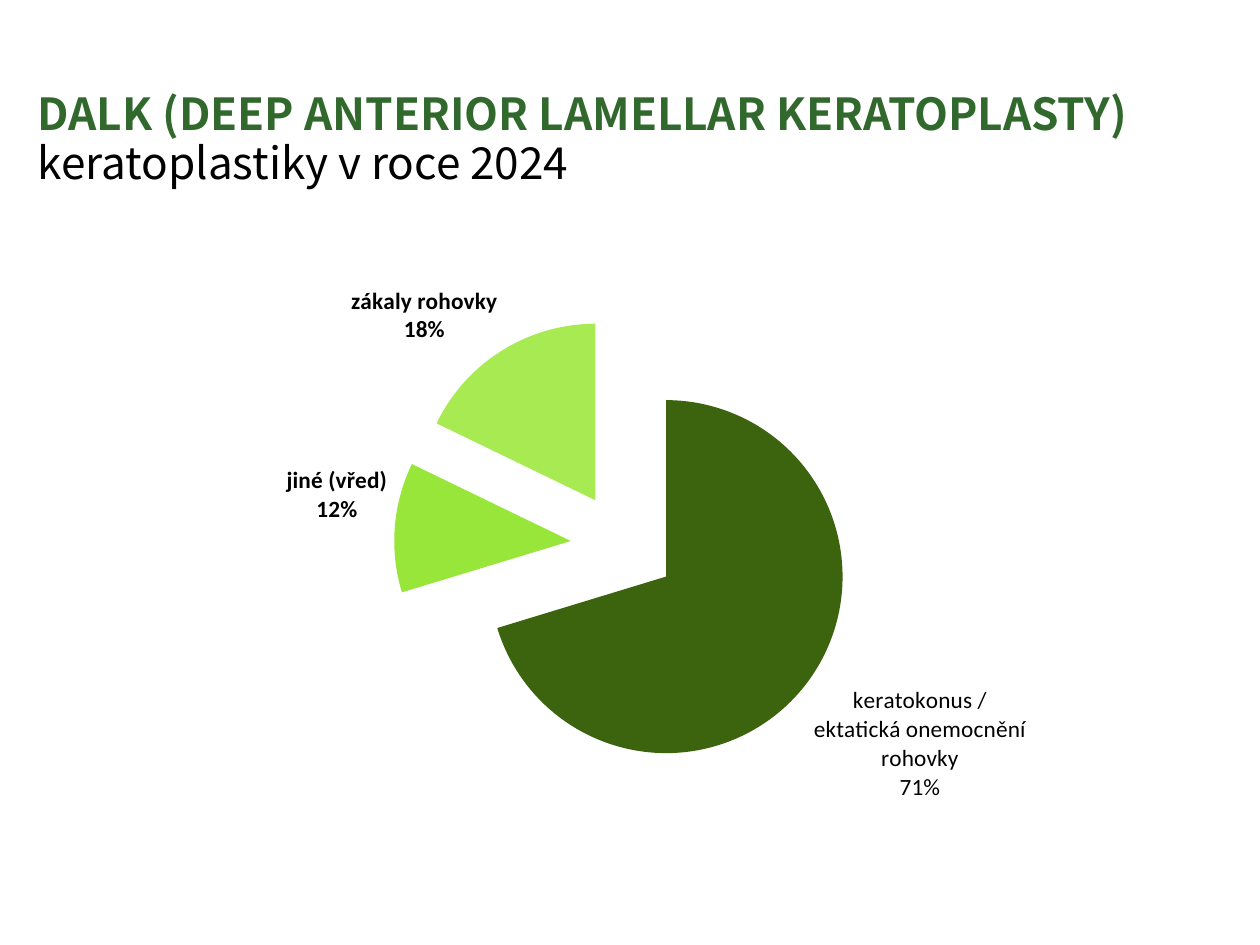
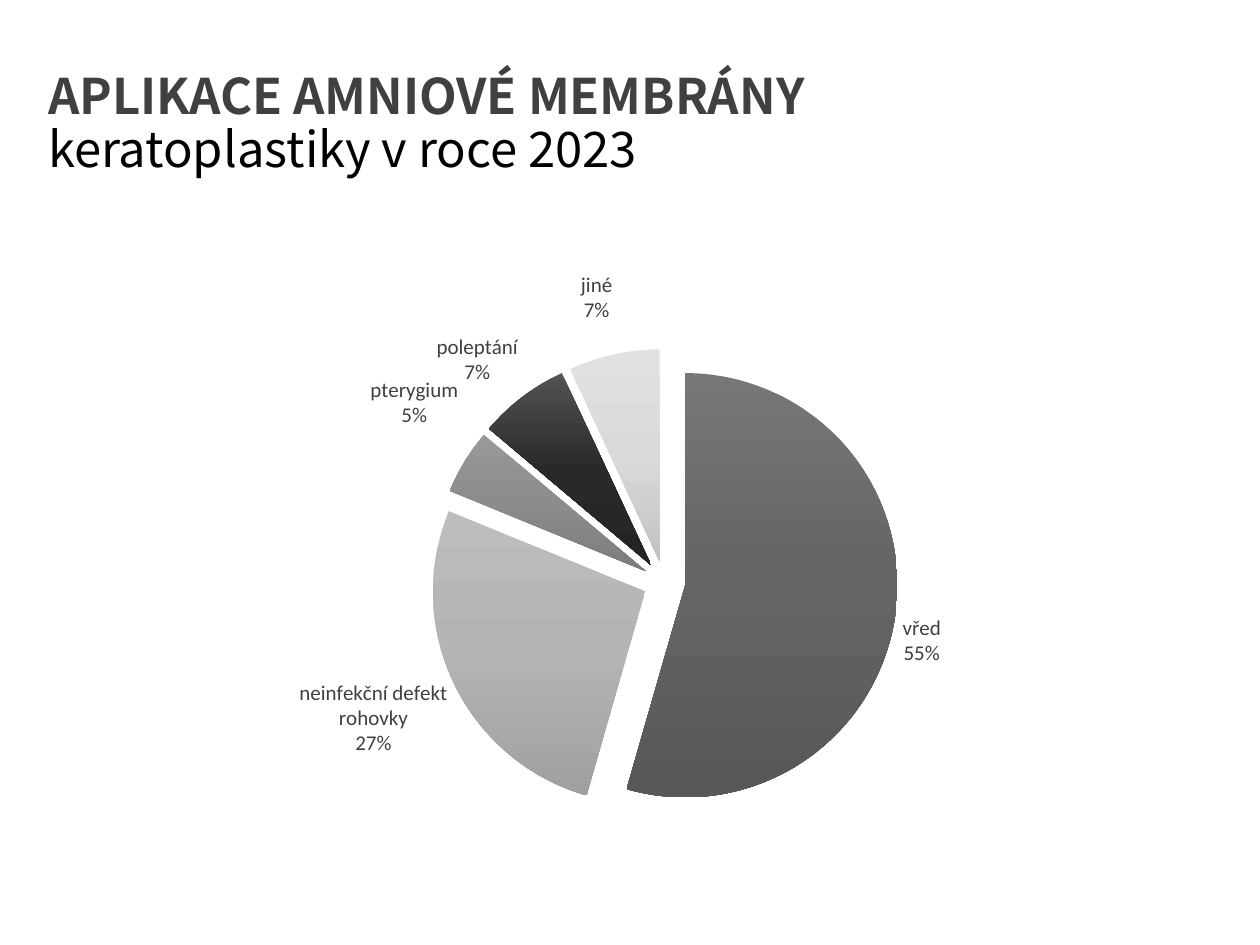
"""Build two slides with exploded pie charts about corneal surgery."""
from copy import deepcopy
from dataclasses import dataclass

from lxml import etree
from pptx import Presentation
from pptx.chart.data import CategoryChartData
from pptx.dml.color import RGBColor
from pptx.enum.chart import XL_CHART_TYPE, XL_LABEL_POSITION
from pptx.enum.text import MSO_ANCHOR
from pptx.oxml.ns import qn
from pptx.util import Cm, Pt

PIE = XL_CHART_TYPE.PIE
OUTSIDE_END = XL_LABEL_POSITION.OUTSIDE_END
BOTTOM = MSO_ANCHOR.BOTTOM


@dataclass(frozen=True)
class Theme:
    title_font: str = "Noto Sans CJK SC"
    chart_font: str = "Calibri"
    chart_size: float = 10
    text: str = "000000"
    green: str = "31692D"
    grey: str = "404040"


THEME = Theme()

SLIDES = [
    dict(
        heading="DALK (DEEP ANTERIOR LAMELLAR KERATOPLASTY)",
        subheading="keratoplastiky v roce 2024",
        heading_color=THEME.green, title_size=25.2, title_pitch=28,
        title_box=(0.51, 0.76, 24.82, 3.15), title_inset=0.12,
        chart_box=(0.89, 5.08, 23.6, 12.85),
        pie_area=dict(x=0.29, y=0.1, w=0.41, h=0.72), explosion=30,
        label_color=THEME.text, label_size=13.3, label_bold=True,
        wrapped_labels={0: "keratokonus /\nektatická onemocnění\nrohovky\n71%"},
        label_rises={1: 0.05},
        slices=[
            ("keratokonus / ektatická onemocnění rohovky", 71, ["3C630D"]),
            ("jiné (vřed)", 12, ["98E63A"]),
            ("zákaly rohovky", 18, ["A7EA52"]),
        ],
    ),
    dict(
        heading="APLIKACE AMNIOVÉ MEMBRÁNY",
        subheading="keratoplastiky v roce 2023",
        heading_color=THEME.grey, title_size=28, title_pitch=30.5,
        title_box=(0.72, 0, 24.61, 3.96), title_inset=0.38,
        chart_box=(1.75, 5.08, 21.36, 12.22),
        pie_area=dict(x=0.32, y=0.16, w=0.45, h=0.77), explosion=10,
        label_color=THEME.grey, label_size=12, label_bold=False,
        wrapped_labels={},
        label_rises={1: 0.01, 2: 0.05, 3: 0.01, 4: 0.04},
        slices=[
            ("vřed", 55, ["777777", "646464", "585858"]),
            ("neinfekční defekt rohovky", 27, ["BDBDBD", "B4B4B4", "A0A0A0"]),
            ("pterygium", 5, ["989898", "8C8C8C", "7C7C7C"]),
            ("poleptání", 7, ["535353", "292929", "242424"]),
            ("jiné", 7, ["E1E1E1", "DADADA", "C2C2C2"]),
        ],
    ),
]


def set_font(font, name, size, color, bold=False):
    font.name = name
    font.size = Pt(size)
    font.bold = bold
    font.color.rgb = RGBColor.from_string(color)


def add_values(parent, **values):
    for tag, value in values.items():
        etree.SubElement(parent, qn(f"c:{tag}")).set("val", str(value))


prs = Presentation()
prs.slide_width = Cm(25.4)
prs.slide_height = Cm(19.05)

for content in SLIDES:
    slide = prs.slides.add_slide(prs.slide_layouts[6])

    title = slide.shapes.add_textbox(*map(Cm, content["title_box"])).text_frame
    title.word_wrap = True
    title.vertical_anchor = BOTTOM
    title.margin_bottom = Cm(content["title_inset"])
    title.text = content["heading"] + "\n" + content["subheading"]
    heading, subheading = title.paragraphs
    for line, color, bold in ((heading, content["heading_color"], True),
                              (subheading, THEME.text, False)):
        line.line_spacing = Pt(content["title_pitch"])
        set_font(line.font, THEME.title_font, content["title_size"], color, bold)

    data = CategoryChartData()
    data.categories = [name for name, share, colors in content["slices"]]
    data.add_series("Series 1", [share for name, share, colors in content["slices"]])
    chart = slide.shapes.add_chart(PIE, *map(Cm, content["chart_box"]), data).chart
    chart.has_legend = False
    chart.has_title = False
    set_font(chart.font, THEME.chart_font, THEME.chart_size, THEME.text)
    chart.plots[0].vary_by_categories = True
    shares = chart.plots[0].series[0]

    for index, (name, share, colors) in enumerate(content["slices"]):
        look = shares.points[index].format
        look.line.fill.background()
        if len(colors) == 1:
            look.fill.solid()
            look.fill.fore_color.rgb = RGBColor.from_string(colors[0])
            continue
        look.fill.gradient()
        look.fill.gradient_angle = 270
        stops = list(shares._element.iter(qn("a:gsLst")))[-1]
        stops.append(deepcopy(stops[0]))
        for step, (stop, color) in enumerate(zip(look.fill.gradient_stops, colors)):
            stop.position = step / 2
            stop.color.rgb = RGBColor.from_string(color)

    explosion = etree.Element(qn("c:explosion"), val=str(content["explosion"]))
    shares._element.find(qn("c:dPt")).addprevious(explosion)

    labels = shares.data_labels
    labels.show_category_name = True
    labels.show_value = True
    labels.show_percentage = False
    labels.number_format = '0"%"'
    labels.number_format_is_linked = False
    labels.position = OUTSIDE_END
    label_font = (THEME.chart_font, content["label_size"],
                  content["label_color"], content["label_bold"])
    set_font(labels.font, *label_font)
    separator = etree.Element(qn("c:separator"))
    separator.text = "\n"
    labels._element.find(qn("c:showBubbleSize")).addnext(separator)
    for leader in labels._element.findall(qn("c:showLeaderLines")):
        leader.set("val", "0")

    shared_settings = [setting for setting in labels._element
                       if setting.tag != qn("c:showLeaderLines")]
    for index, wording in content["wrapped_labels"].items():
        wrapped = shares.points[index].data_label
        wrapped.text_frame.text = wording
        wrapped.position = OUTSIDE_END
        for line in wrapped.text_frame.paragraphs:
            set_font(line.font, *label_font)
    for index, rise in content["label_rises"].items():
        raised = etree.Element(qn("c:dLbl"))
        add_values(raised, idx=index)
        offset = etree.SubElement(etree.SubElement(raised, qn("c:layout")),
                                  qn("c:manualLayout"))
        add_values(offset, x=0, y=-rise)
        raised.extend(deepcopy(shared_settings))
        shared_settings[0].addprevious(raised)

    plot_area = chart._chartSpace.find(".//" + qn("c:plotArea"))
    for automatic in plot_area.findall(qn("c:layout")):
        plot_area.remove(automatic)
    layout = etree.Element(qn("c:layout"))
    plot_area.insert(0, layout)
    manual = etree.SubElement(layout, qn("c:manualLayout"))
    add_values(manual, layoutTarget="inner", xMode="edge", yMode="edge",
               **content["pie_area"])

prs.save("out.pptx")
